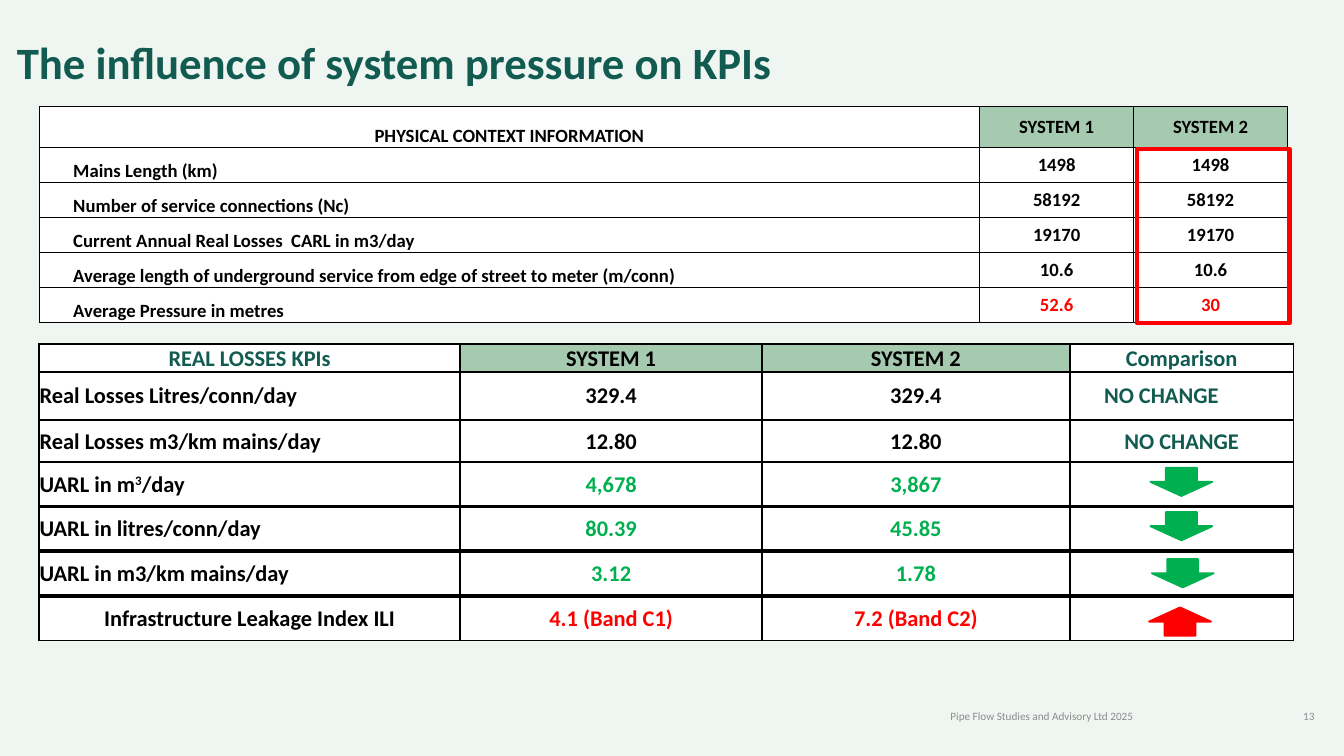
from dataclasses import dataclass

from lxml import etree
from pptx import Presentation
from pptx.dml.color import RGBColor
from pptx.enum.shapes import MSO_SHAPE
from pptx.enum.text import MSO_ANCHOR, PP_ALIGN
from pptx.oxml.ns import qn
from pptx.util import Inches, Pt

LEFT, CENTER, RIGHT = PP_ALIGN.LEFT, PP_ALIGN.CENTER, PP_ALIGN.RIGHT
TOP, MIDDLE, BOTTOM = MSO_ANCHOR.TOP, MSO_ANCHOR.MIDDLE, MSO_ANCHOR.BOTTOM
RECTANGLE, DOWN_ARROW = MSO_SHAPE.RECTANGLE, MSO_SHAPE.DOWN_ARROW

FONT = "Calibri"
BLACK, WHITE, GRAY = "000000", "FFFFFF", "8C8C8C"
TEAL, SAGE, MINT = "125B50", "A6CAB0", "EFF6F2"
RED, GREEN = "FF0000", "00B050"

TABLE_LEFT = 0.58
KPI_COLUMNS = [6.27, 4.49, 4.58, 3.33]
KPI_ROW_HEIGHT = 0.65


@dataclass
class Entry:
    """Content and look of one table cell; '^' encloses a superscript."""
    text: str = ""
    color: str = BLACK
    align: PP_ALIGN = CENTER
    fill: str = WHITE
    anchor: MSO_ANCHOR = MIDDLE
    indented: bool = False


def rgb(value):
    return RGBColor.from_string(value)


def add_run(para, text, size, color, bold=False):
    span = para.add_run()
    span.text = text
    span.font.name = FONT
    span.font.size = Pt(size)
    span.font.bold = bold
    span.font.color.rgb = rgb(color)
    return span


def add_text(page, left, top, width, height, text, size, color,
             align=LEFT, bold=False, anchor=MIDDLE):
    box = page.shapes.add_textbox(Inches(left), Inches(top), Inches(width), Inches(height))
    frame = box.text_frame
    frame.word_wrap = True
    frame.vertical_anchor = anchor
    para = frame.paragraphs[0]
    para.alignment = align
    add_run(para, text, size, color, bold)
    return frame


def add_shape(page, kind, left, top, width, height, line, line_width, fill=None):
    shape = page.shapes.add_shape(kind, Inches(left), Inches(top), Inches(width), Inches(height))
    shape.shadow.inherit = False
    if fill:
        shape.fill.solid()
        shape.fill.fore_color.rgb = rgb(fill)
    else:
        shape.fill.background()
    shape.line.color.rgb = rgb(line)
    shape.line.width = Pt(line_width)
    return shape


def add_arrow(page, left, top, color, rotation=0):
    arrow = add_shape(page, DOWN_ARROW, left, top, 0.92, 0.42, color, 2, color)
    arrow.rotation = rotation


def set_borders(cell, width):
    properties = cell._tc.get_or_add_tcPr()
    for side in ("a:lnL", "a:lnR", "a:lnT", "a:lnB"):
        line = etree.SubElement(properties, qn(side), w=str(Pt(width)))
        fill = etree.SubElement(line, qn("a:solidFill"))
        etree.SubElement(fill, qn("a:srgbClr"), val=BLACK)


def fill_cell(cell, entry, size, border):
    set_borders(cell, border)
    cell.fill.solid()
    cell.fill.fore_color.rgb = rgb(entry.fill)
    cell.vertical_anchor = entry.anchor
    cell.margin_left = cell.margin_right = cell.margin_top = Inches(0.01)
    cell.margin_bottom = 0
    para = cell.text_frame.paragraphs[0]
    para.alignment = entry.align
    if entry.indented:
        para.level = 1
        para._p.get_or_add_pPr().set("marL", str(Inches(0.5)))
    for index, part in enumerate(entry.text.split("^")):
        if part:
            span = add_run(para, part, size, entry.color, True)
            if index % 2:
                span._r.get_or_add_rPr().set("baseline", "30000")


def add_table(page, top, columns, heights, rows, size, border):
    frame = page.shapes.add_table(len(rows), len(columns), Inches(TABLE_LEFT), Inches(top),
                                  Inches(sum(columns)), Inches(sum(heights)))
    table = frame.table
    table.first_row = table.horz_banding = False
    for column, width in zip(table.columns, columns):
        column.width = Inches(width)
    for row, height, entries in zip(table.rows, heights, rows):
        row.height = Inches(height)
        for cell, entry in zip(row.cells, entries):
            fill_cell(cell, entry, size, border)


def add_context_table(page):
    facts = [
        ("Mains Length (km)", "1498", "1498", BLACK),
        ("Number of service connections (Nc)", "58192", "58192", BLACK),
        ("Current Annual Real Losses  CARL in m3/day", "19170", "19170", BLACK),
        ("Average length of underground service from edge of street to meter (m/conn)",
         "10.6", "10.6", BLACK),
        ("Average Pressure in metres", "52.6", "30", RED),
    ]
    rows = [[Entry("PHYSICAL CONTEXT INFORMATION", anchor=BOTTOM),
             Entry("SYSTEM 1", fill=SAGE), Entry("SYSTEM 2", fill=SAGE)]]
    for label, first, second, color in facts:
        rows.append([Entry(label, align=LEFT, anchor=BOTTOM, indented=True),
                     Entry(first, color), Entry(second, color)])
    add_table(page, 1.58, [14, 2.29, 2.29], [0.62] + [0.52] * len(facts), rows, 20, 1)


def add_kpi_tables(page):
    # Header and the unchanged indicators
    rows = [
        [Entry("REAL LOSSES KPIs", TEAL), Entry("SYSTEM 1", fill=SAGE),
         Entry("SYSTEM 2", fill=SAGE), Entry("Comparison", TEAL)],
        [Entry("Real Losses Litres/conn/day", align=LEFT), Entry("329.4"), Entry("329.4"),
         Entry("NO CHANGE", TEAL, LEFT, indented=True)],
        [Entry("Real Losses m3/km mains/day", align=LEFT), Entry("12.80"), Entry("12.80"),
         Entry("NO CHANGE", TEAL)],
    ]
    add_table(page, 5.12, KPI_COLUMNS, [0.41, 0.72, KPI_ROW_HEIGHT], rows, 24, 2.25)

    # One single-row table for each indicator that changes
    changes = [
        (6.88, "UARL in m^3^/day", LEFT, "4,678", "3,867", GREEN),
        (7.54, "UARL in litres/conn/day", LEFT, "80.39", "45.85", GREEN),
        (8.21, "UARL in m3/km mains/day", LEFT, "3.12", "1.78", GREEN),
        (8.88, "Infrastructure Leakage Index ILI", CENTER,
         "4.1 (Band C1)", "7.2 (Band C2)", RED),
    ]
    for top, label, align, first, second, color in changes:
        row = [Entry(label, align=align), Entry(first, color), Entry(second, color), Entry()]
        add_table(page, top, KPI_COLUMNS, [KPI_ROW_HEIGHT], [row], 24, 2.25)


def main():
    deck = Presentation()
    deck.slide_width, deck.slide_height = Inches(20), Inches(11.25)
    page = deck.slides.add_slide(deck.slide_layouts[6])
    page.background.fill.solid()
    page.background.fill.fore_color.rgb = rgb(MINT)

    # Title
    title = add_text(page, 0.25, 0.39, 19.5, 0.89, "The influence of system pressure on KPIs",
                     48, TEAL, bold=True, anchor=TOP)
    title.margin_left = title.margin_right = title.margin_top = title.margin_bottom = 0
    title.paragraphs[0].line_spacing = Pt(67.2)

    # Tables, with the second system highlighted
    add_context_table(page)
    add_shape(page, RECTANGLE, 16.92, 2.22, 2.27, 2.59, RED, 4.5)
    add_kpi_tables(page)

    # Direction of change
    for left, top in [(17.12, 6.96), (17.12, 7.62), (17.14, 8.32)]:
        add_arrow(page, left, top, GREEN)
    add_arrow(page, 17.1, 9.04, RED, 180)

    # Footer
    add_text(page, 13.92, 10.45, 3.17, 0.4, "Pipe Flow Studies and Advisory Ltd 2025",
             12, GRAY, CENTER)
    add_text(page, 17.33, 10.45, 2.33, 0.4, "13", 12, GRAY, RIGHT)

    deck.save("out.pptx")


if __name__ == "__main__":
    main()
